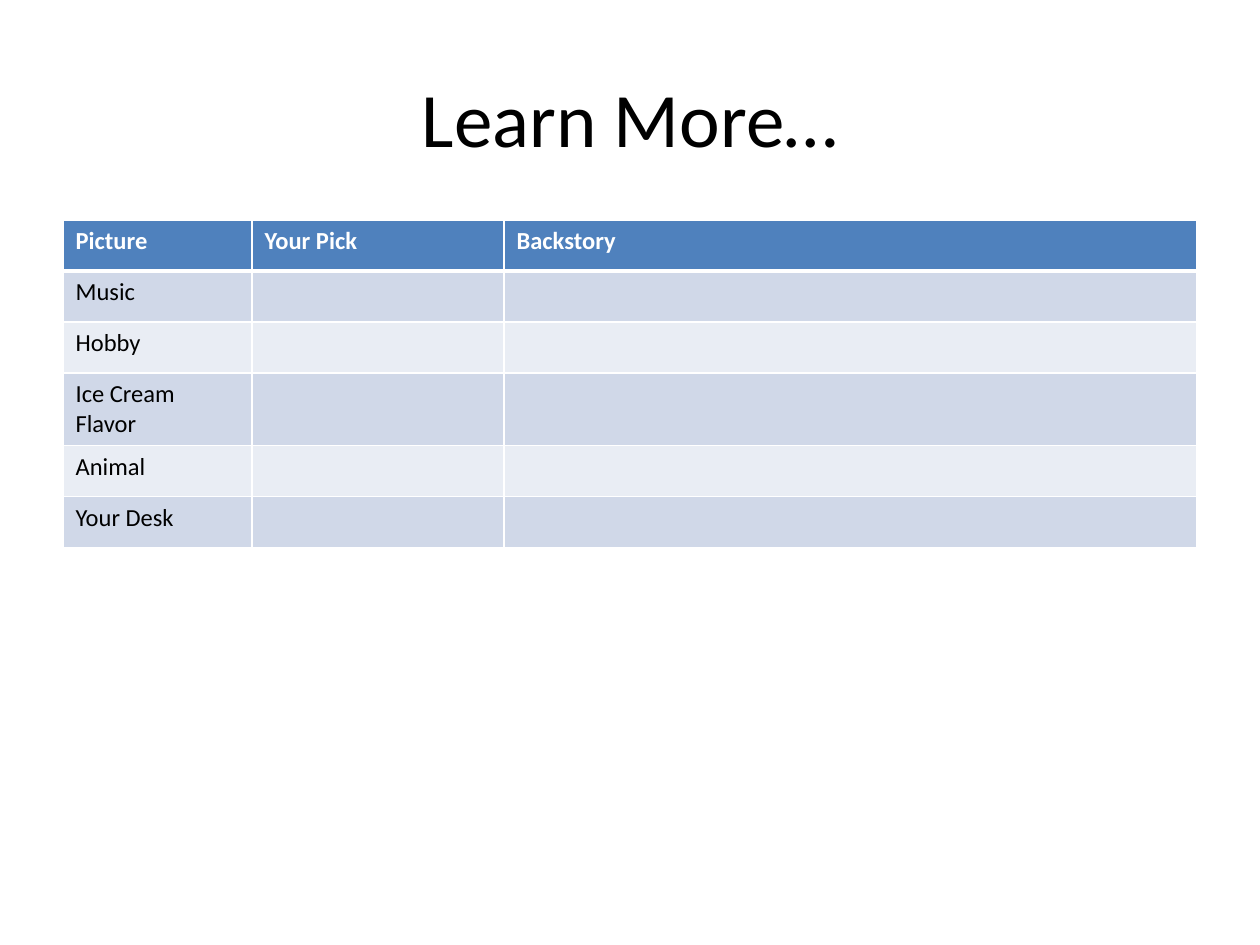
from pptx import Presentation, util as u
from pptx.dml.color import RGBColor
from pptx.enum import text
from pptx.oxml import parse_xml
from pptx.oxml.ns import nsdecls

BLACK = RGBColor(0x00, 0x00, 0x00)
WHITE = RGBColor(0xFF, 0xFF, 0xFF)
BLUE = RGBColor(0x4F, 0x81, 0xBD)
BANDS = RGBColor(0xE9, 0xED, 0xF4), RGBColor(0xD0, 0xD8, 0xE8)

HEADS = ["Picture", "Your Pick", "Backstory"]
TOPICS = ["Music", "Hobby", "Ice Cream Flavor", "Animal", "Your Desk"]
WIDTHS = [189, 252, 693]


def px(n):
    return u.Emu(round(n * 914400 / 126))


def write(frame, words, size=14, color=BLACK, bold=False, align=text.PP_ALIGN.LEFT):
    para = frame.paragraphs[0]
    para.alignment = align
    run = para.add_run()
    run.text = words
    font = run.font
    font.name, font.size, font.bold = "Calibri", u.Pt(size), bold
    font.color.rgb = color


def edge(cell, side, width):
    """Draw one cell border; call before the fill, which must follow it in the XML."""
    cell._tc.get_or_add_tcPr().append(parse_xml(
        f'<a:ln{side} {nsdecls("a")} w="{u.Pt(width)}"><a:solidFill>'
        f'<a:srgbClr val="{WHITE}"/></a:solidFill></a:ln{side}>'))


class Page:
    def __init__(self, deck):
        self.slide = deck.slides.add_slide(deck.slide_layouts[5])

    def title(self, words, x, y, w, h):
        box = self.slide.shapes.title
        box.left, box.top, box.width, box.height = map(px, (x, y, w, h))
        box.text_frame.vertical_anchor = text.MSO_ANCHOR.MIDDLE
        write(box.text_frame, words, size=44, align=text.PP_ALIGN.CENTER)

    def table(self, rows, widths, x, y, high):
        grid = self.slide.shapes.add_table(
            len(rows), len(widths), px(x), px(y),
            px(sum(widths)), px(high * len(rows))).table
        for col, width in zip(grid.columns, widths):
            col.width = px(width)
        for r, row in enumerate(rows):
            for c, words in enumerate(row):
                self.cell(grid.cell(r, c), words, r)

    def cell(self, cell, words, row):
        head = row == 0
        for side in "LRTB":
            thick = (row, side) in ((0, "B"), (1, "T"))
            edge(cell, side, 3 if thick else 1)
        cell.fill.solid()
        cell.fill.fore_color.rgb = BLUE if head else BANDS[row % 2]
        if words:
            write(cell.text_frame, words, color=WHITE if head else BLACK, bold=head)


def main():
    deck = Presentation()
    deck.slide_width, deck.slide_height = px(1260), px(945)
    page = Page(deck)
    page.title("Learn More…", 63, 38, 1134, 157)
    rows = [HEADS] + [[topic, "", ""] for topic in TOPICS]
    page.table(rows, WIDTHS, 63, 220, 51)
    deck.save("out.pptx")


if __name__ == "__main__":
    main()
